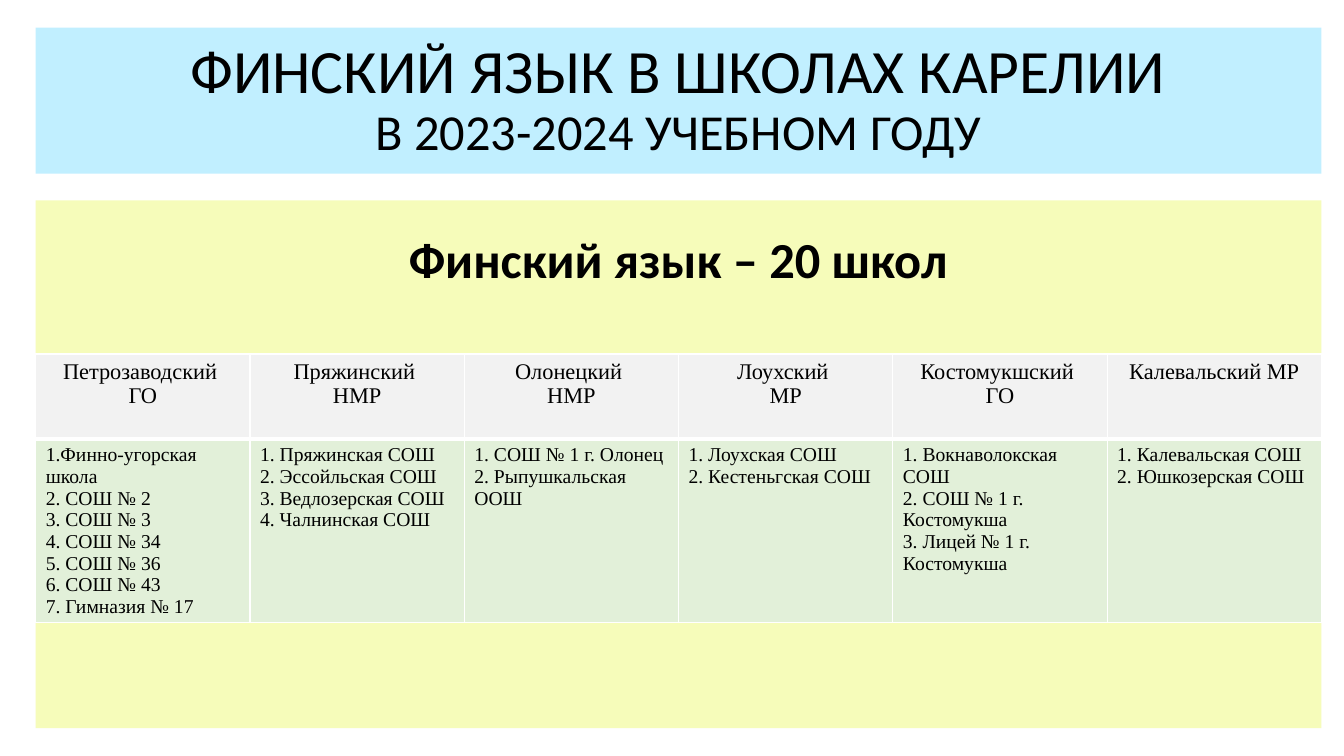
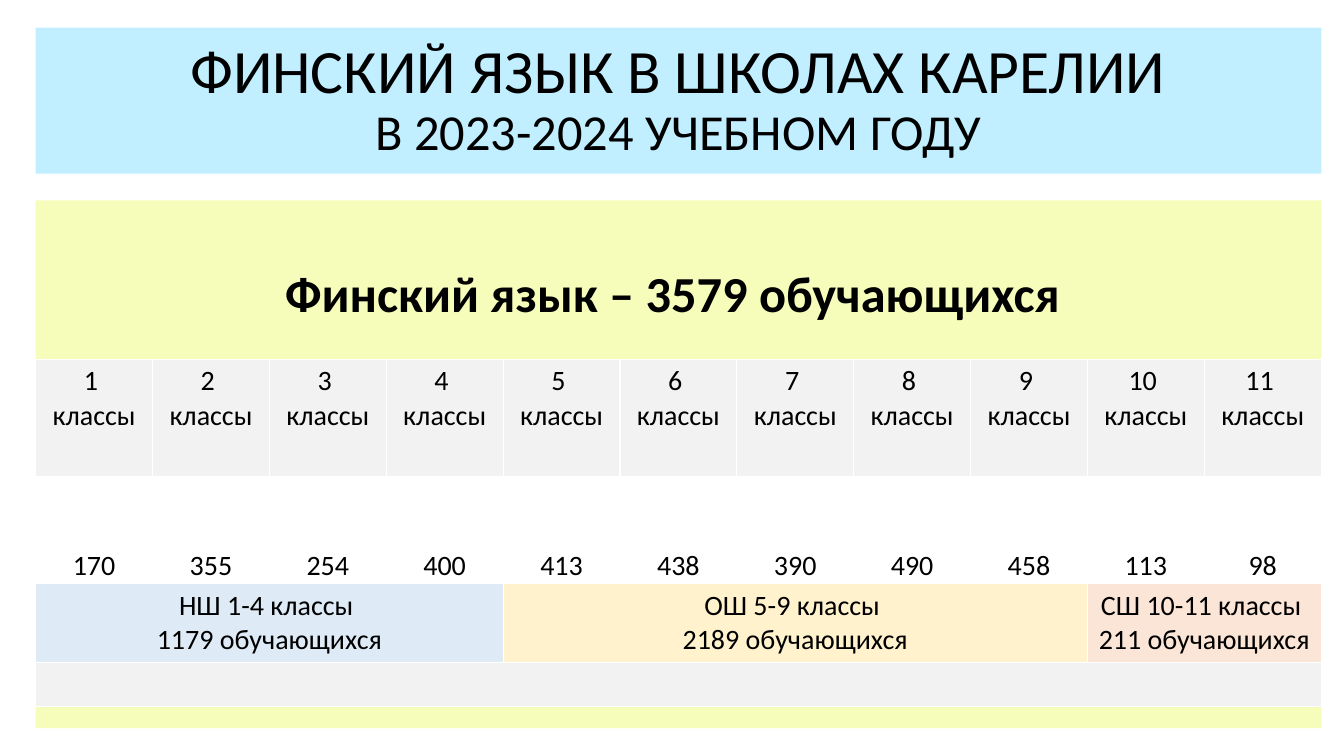
from lxml import etree
from pptx import Presentation
from pptx.dml.color import RGBColor
from pptx.enum.shapes import MSO_SHAPE
from pptx.enum.text import MSO_ANCHOR, PP_ALIGN
from pptx.oxml.ns import qn
from pptx.util import Cm, Pt

RECTANGLE = MSO_SHAPE.RECTANGLE
TOP, MIDDLE, BOTTOM = MSO_ANCHOR.TOP, MSO_ANCHOR.MIDDLE, MSO_ANCHOR.BOTTOM
LEFT, CENTER = PP_ALIGN.LEFT, PP_ALIGN.CENTER

BLACK = RGBColor(0x00, 0x00, 0x00)
WHITE = RGBColor(0xFF, 0xFF, 0xFF)
SKY = RGBColor(0xC1, 0xEF, 0xFF)
LEMON = RGBColor(0xF6, 0xFC, 0xBA)
GREY = RGBColor(0xF2, 0xF2, 0xF2)
GREEN = RGBColor(0xE2, 0xF0, 0xD9)
BLUE = RGBColor(0xDE, 0xEB, 0xF7)
YELLOW = RGBColor(0xFF, 0xF2, 0xCC)
PEACH = RGBColor(0xFB, 0xE5, 0xD6)

SANS, SERIF = "Calibri", "Times New Roman"
MARGIN, WIDTH = 0.9, 32.4
TITLE = ["ФИНСКИЙ ЯЗЫК В ШКОЛАХ КАРЕЛИИ", "В 2023-2024 УЧЕБНОМ ГОДУ"]

DISTRICTS = [
    (["Петрозаводский ", "ГО"],
     ["1.Финно-угорская школа", "2. СОШ № 2", "3. СОШ № 3", "4. СОШ № 34",
      "5. СОШ № 36", "6. СОШ № 43", "7. Гимназия № 17"]),
    (["Пряжинский ", "НМР"],
     ["1. Пряжинская СОШ", "2. Эссойльская СОШ", "3. Ведлозерская СОШ",
      "4. Чалнинская СОШ"]),
    (["Олонецкий ", "НМР"], ["1. СОШ № 1 г. Олонец", "2. Рыпушкальская ООШ"]),
    (["Лоухский ", "МР"], ["1. Лоухская СОШ", "2. Кестеньгская СОШ"]),
    (["Костомукшский ", "ГО"],
     ["1. Вокнаволокская СОШ", "2. СОШ № 1 г. Костомукша",
      "3. Лицей № 1 г. Костомукша"]),
    (["Калевальский МР"], ["1. Калевальская СОШ", "2. Юшкозерская СОШ"]),
]
PUPILS = [170, 355, 254, 400, 413, 438, 390, 490, 458, 113, 98]
STAGES = [
    (0, 3, ["НШ 1-4 классы ", "1179 обучающихся"], BLUE),
    (4, 8, ["ОШ 5-9 классы ", "2189 обучающихся"], YELLOW),
    (9, 10, ["СШ 10-11 классы ", "211 обучающихся"], PEACH),
]


class Report:
    """Holds the shared style and the current slide of the deck."""

    def __init__(self):
        self.deck = Presentation()
        self.deck.slide_width, self.deck.slide_height = Cm(33.87), Cm(19.05)
        self.page = None

    def add_lines(self, frame, lines, sizes, font=SANS, align=CENTER, bold=False, spacing=1.0):
        for index, (line, size) in enumerate(zip(lines, sizes)):
            para = frame.add_paragraph() if index else frame.paragraphs[0]
            para.text = line
            para.alignment = align
            para.line_spacing = spacing
            para.font.name = font
            para.font.size = Pt(size)
            para.font.bold = bold
            para.font.color.rgb = BLACK

    def band(self, top, height, color, anchor):
        box = self.page.shapes.add_shape(
            RECTANGLE, Cm(MARGIN), Cm(top), Cm(WIDTH), Cm(height))
        box.shadow.inherit = False
        box.fill.solid()
        box.fill.fore_color.rgb = color
        box.line.fill.background()
        frame = box.text_frame
        frame.word_wrap = True
        frame.vertical_anchor = anchor
        return frame

    def start(self, heading, inset):
        self.page = self.deck.slides.add_slide(self.deck.slide_layouts[6])
        self.add_lines(self.band(0.7, 3.68, SKY, MIDDLE), TITLE, [44, 36], spacing=0.9)
        panel = self.band(5.05, 13.3, LEMON, TOP)
        panel.margin_top = Cm(inset)
        self.add_lines(panel, [heading], [36], bold=True)

    def table(self, top, heights, columns):
        table = self.page.shapes.add_table(
            len(heights), columns, Cm(MARGIN), Cm(top), Cm(WIDTH), Cm(sum(heights))).table
        table.first_row = table.horz_banding = False
        for row, height in zip(table.rows, heights):
            row.height = Cm(height)
        for number, row in enumerate(table.rows):
            for cell in row.cells:
                self.borders(cell, 3 if number == 1 else 1, 3 if number == 0 else 1)
        return table

    def borders(self, cell, top, bottom):
        properties = cell._tc.get_or_add_tcPr()
        for edge, width in (("L", 1), ("R", 1), ("T", top), ("B", bottom)):
            line = etree.SubElement(properties, qn(f"a:ln{edge}"), w=str(Pt(width)))
            fill = etree.SubElement(line, qn("a:solidFill"))
            etree.SubElement(fill, qn("a:srgbClr"), val=str(WHITE))

    def cell(self, cell, lines, color, size=20, font=SANS, align=CENTER):
        cell.fill.solid()
        cell.fill.fore_color.rgb = color
        self.add_lines(cell.text_frame, lines, [size] * len(lines), font, align)


def schools(report):
    report.start("Финский язык – 20 школ", 0.7)
    table = report.table(8.92, [2.15, 4.6], len(DISTRICTS))
    for column, (district, names) in enumerate(DISTRICTS):
        report.cell(table.cell(0, column), district, GREY, 16, SERIF)
        report.cell(table.cell(1, column), names, GREEN, 14, SERIF, LEFT)


def pupils(report):
    report.start("Финский язык – 3579 обучающихся ", 1.55)
    table = report.table(9.05, [3, 2.65, 2, 1.1], len(PUPILS))
    for column, count in enumerate(PUPILS):
        report.cell(table.cell(0, column), [f"{column + 1} ", "классы"], GREY)
        total = table.cell(1, column)
        report.cell(total, [str(count)], WHITE)
        total.vertical_anchor = BOTTOM
        total.margin_top = total.margin_bottom = 0
    for first, last, lines, color in STAGES:
        stage = table.cell(2, first)
        stage.merge(table.cell(2, last))
        report.cell(stage, lines, color)
    footer = table.cell(3, 0)
    footer.merge(table.cell(3, len(PUPILS) - 1))
    report.cell(footer, [], GREY)


def main():
    report = Report()
    schools(report)
    pupils(report)
    report.deck.save("out.pptx")


if __name__ == "__main__":
    main()
